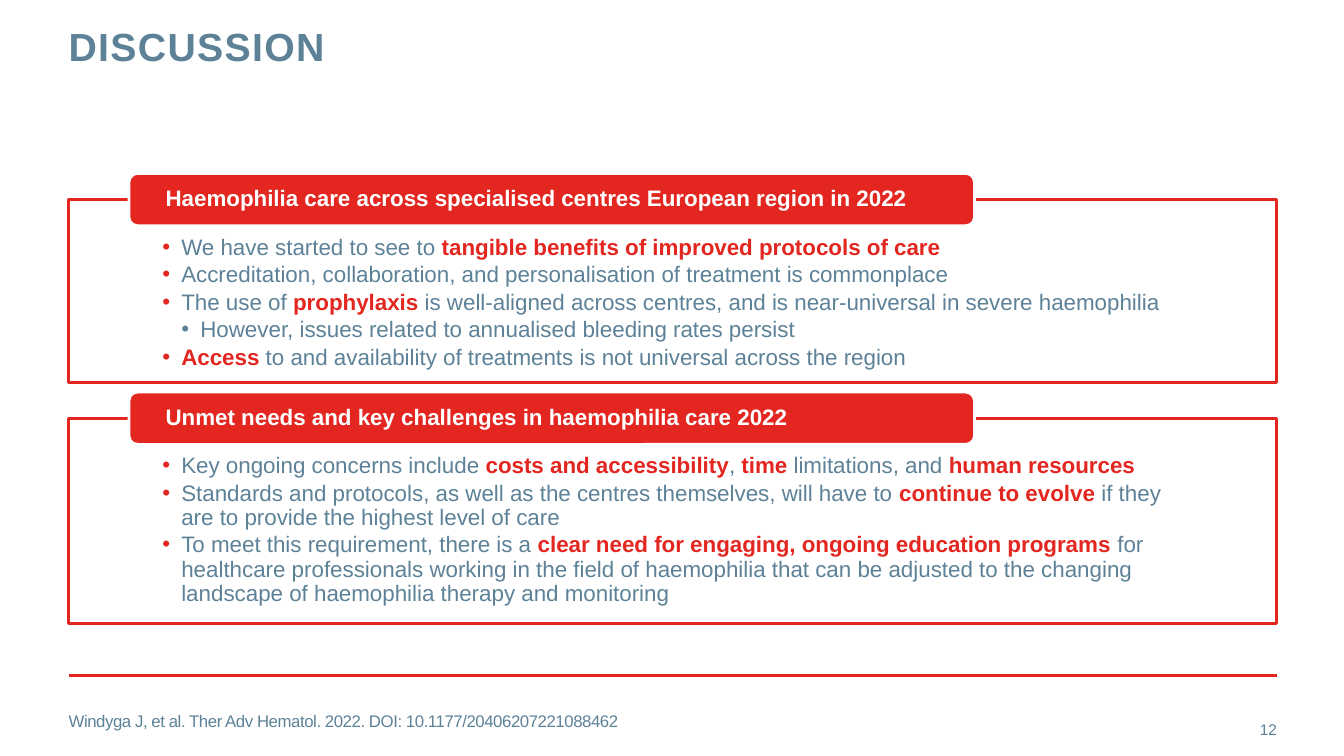
from dataclasses import dataclass

from lxml import etree
from pptx import Presentation
from pptx import util as u
from pptx.dml.color import RGBColor
from pptx.enum import shapes, text
from pptx.oxml import ns


@dataclass(frozen=True)
class Theme:
    font: str = "Arial"
    red: str = "E32620"
    slate: str = "5D8298"
    white: str = "FFFFFF"
    title: int = 28
    body: int = 16
    citation: int = 12
    number: int = 11
    line: int = 2


T = Theme()
LEFT, WIDTH = 1.73, 30.45  # shared content column, cm

# Each bullet is (level, text); *stars* enclose emphasised words
PANELS = [
    ((LEFT, 5.03, WIDTH, 4.62),
     "Haemophilia care across specialised centres European region in 2022",
     [(0, "We have started to see to *tangible benefits of improved protocols of care*"),
      (0, "Accreditation, collaboration, and personalisation of treatment is commonplace"),
      (0, "The use of *prophylaxis* is well-aligned across centres, "
          "and is near-universal in severe haemophilia"),
      (1, "However, issues related to annualised bleeding rates persist"),
      (0, "*Access* to and availability of treatments is not universal across the region")]),
    ((LEFT, 10.54, WIDTH, 5.18),
     "Unmet needs and key challenges in haemophilia care 2022",
     [(0, "Key ongoing concerns include *costs and accessibility*, *time* limitations, "
          "and *human resources*"),
      (0, "Standards and protocols, as well as the centres themselves, will have to "
          "*continue to evolve *if they are to provide the highest level of care"),
      (0, "To meet this requirement, there is a *clear need for engaging, ongoing "
          "education programs *for healthcare professionals working in the field of "
          "haemophilia that can be adjusted to the changing landscape of haemophilia "
          "therapy and monitoring")]),
]


def rgb(color):
    return RGBColor.from_string(color)


def add_run(p, words, size, color, bold=False, spacing=0):
    r = p.add_run()
    r.text = words
    f = r.font
    f.name, f.size, f.bold = T.font, u.Pt(size), bold
    f.color.rgb = rgb(color)
    if spacing:
        r._r.get_or_add_rPr().set("spc", str(round(spacing * 100)))


def set_frame(sp, anchor, insets=(0, 0, 0, 0)):
    tf = sp.text_frame
    tf.word_wrap = True
    tf.vertical_anchor = anchor
    tf.margin_left, tf.margin_top, tf.margin_right, tf.margin_bottom = map(u.Cm, insets)
    return tf


def add_text(s, box, words, size, anchor, bold=False, spacing=0):
    tf = set_frame(s.shapes.add_textbox(*map(u.Cm, box)), anchor)
    p = tf.paragraphs[0]
    add_run(p, words, size, T.slate, bold, spacing)
    return p


def add_box(s, kind, box, fill, line):
    sp = s.shapes.add_shape(kind, *map(u.Cm, box))
    sp.shadow.inherit = False
    sp.fill.solid()
    sp.fill.fore_color.rgb = rgb(fill)
    sp.line.color.rgb = rgb(line)
    sp.line.width = u.Pt(T.line)
    return sp


def set_bullet(p, level):
    step = u.Cm(0.48)
    pPr = p._p.get_or_add_pPr()
    pPr.set("marL", str(step * (level + 1)))
    pPr.set("indent", str(-step))
    color = etree.SubElement(pPr, ns.qn("a:buClr"))
    etree.SubElement(color, ns.qn("a:srgbClr"), val=T.slate if level else T.red)
    etree.SubElement(pPr, ns.qn("a:buFont"), typeface=T.font)
    etree.SubElement(pPr, ns.qn("a:buChar"), char="•")


def add_panel(s, box, heading, bullets):
    left, top, width, height = box
    # Outlined panel with its bullets
    sp = add_box(s, shapes.MSO_SHAPE.RECTANGLE, box, T.white, T.red)
    tf = set_frame(sp, text.MSO_ANCHOR.TOP, (2.36, 0.91, 2.36, 0.3))
    for i, (level, words) in enumerate(bullets):
        p = tf.paragraphs[0] if i == 0 else tf.add_paragraph()
        set_bullet(p, level)
        p.level = level
        p.alignment = text.PP_ALIGN.LEFT
        p.line_spacing = 0.9
        p.space_after = u.Pt(2.4)
        for j, part in enumerate(words.split("*")):
            if part:
                strong = j % 2 == 1
                add_run(p, part, T.body, T.red if strong else T.slate, strong)

    # Heading tab centred on the top edge
    tab_height = 1.32
    tab = (left + 1.52, top - tab_height / 2, 21.31, tab_height)
    sp = add_box(s, shapes.MSO_SHAPE.ROUNDED_RECTANGLE, tab, T.red, T.white)
    tf = set_frame(sp, text.MSO_ANCHOR.MIDDLE, (0.86, 0, 0.86, 0))
    p = tf.paragraphs[0]
    p.alignment = text.PP_ALIGN.LEFT
    p.line_spacing = 0.9
    add_run(p, heading, T.body, T.white, True)


def add_title(s, box):
    p = add_text(s, box, "DISCUSSION", T.title, text.MSO_ANCHOR.TOP, True, 1)
    p.line_spacing = u.Pt(30)


def add_footer(s, box):
    left, top, width, height = box
    # Rule
    rule = s.shapes.add_connector(shapes.MSO_CONNECTOR.STRAIGHT, u.Cm(left), u.Cm(top),
                                  u.Cm(left + width), u.Cm(top))
    rule.line.color.rgb = rgb(T.red)
    rule.line.width = u.Pt(T.line)
    etree.SubElement(rule._element.spPr, ns.qn("a:effectLst"))

    # Citation and slide number
    number_width, row = 2.18, 1.02
    add_text(s, (left, top + 0.64, width - number_width, row),
             "Windyga J, et al. Ther Adv Hematol. 2022. DOI: 10.1177/20406207221088462",
             T.citation, text.MSO_ANCHOR.MIDDLE, spacing=-0.3)
    p = add_text(s, (left + width - number_width, top + height - row, number_width, row),
                 "12", T.number, text.MSO_ANCHOR.MIDDLE)
    p.alignment = text.PP_ALIGN.RIGHT


def main():
    prs = Presentation()
    prs.slide_width, prs.slide_height = u.Cm(33.87), u.Cm(19.05)
    s = prs.slides.add_slide(prs.slide_layouts[6])
    add_title(s, (LEFT, 0.69, 24.28, 2.24))
    for box, heading, bullets in PANELS:
        add_panel(s, box, heading, bullets)
    add_footer(s, (LEFT, 17.02, WIDTH, 1.86))
    prs.save("out.pptx")


if __name__ == "__main__":
    main()
